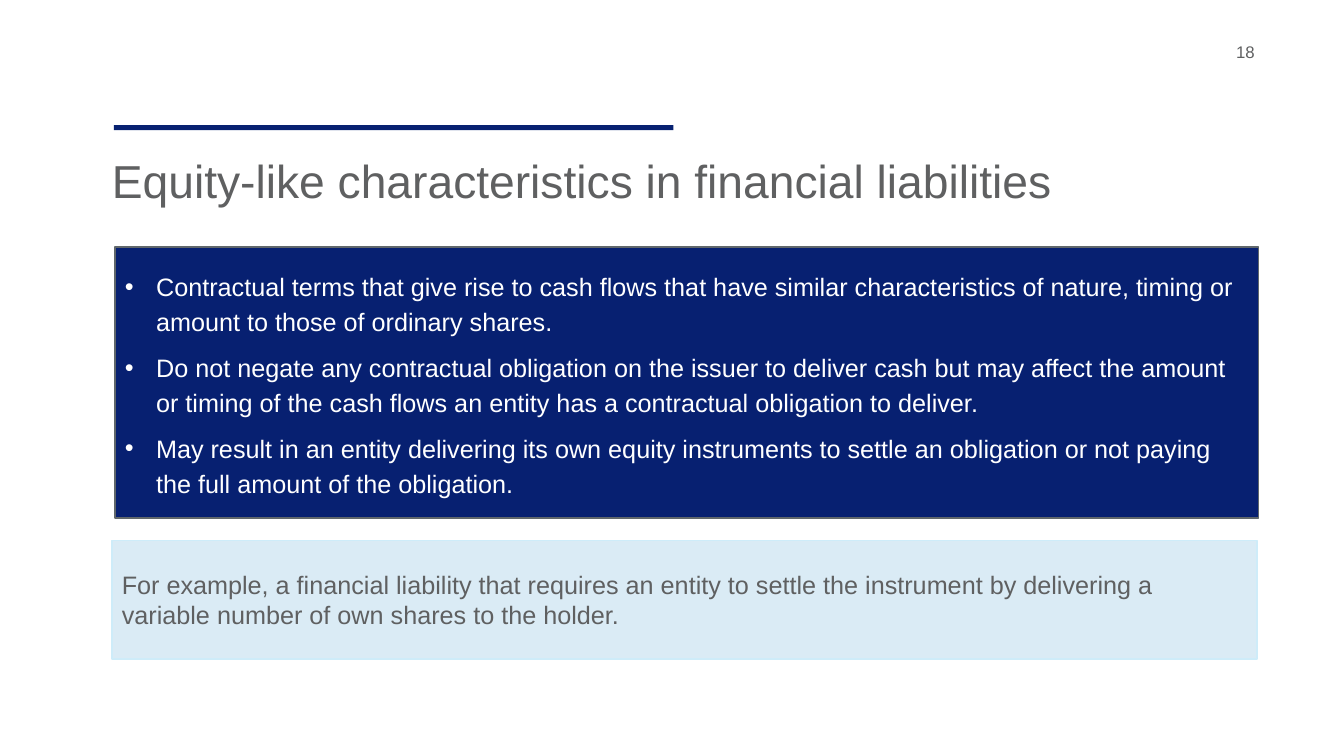
from dataclasses import dataclass

from lxml import etree
from pptx import Presentation
from pptx.dml.color import RGBColor
from pptx.enum.shapes import MSO_SHAPE
from pptx.enum.text import MSO_ANCHOR, MSO_AUTO_SIZE, PP_ALIGN
from pptx.oxml.ns import qn
from pptx.util import Inches, Pt

RECTANGLE = MSO_SHAPE.RECTANGLE
TOP, MIDDLE = MSO_ANCHOR.TOP, MSO_ANCHOR.MIDDLE
LEFT_ALIGNED = PP_ALIGN.LEFT
NO_AUTOFIT = MSO_AUTO_SIZE.NONE
TITLE_ONLY = 5


@dataclass(frozen=True)
class Theme:
    font: str = "Arial"
    navy: str = "072171"
    panel: str = "072071"
    panel_line: str = "60676B"
    pale: str = "DAEBF5"
    pale_line: str = "CEECF9"
    grey: str = "5F6061"
    white: str = "FFFFFF"
    title_size: int = 33
    body_size: int = 18
    number_size: int = 12


@dataclass(frozen=True)
class Box:
    left: float
    top: float
    width: float
    height: float

    def emu(self):
        return [Inches(value) for value in (self.left, self.top, self.width, self.height)]


THEME = Theme()
SLIDE_WIDTH, SLIDE_HEIGHT = 13.33, 7.5
MARGIN = 1.11
CONTENT_WIDTH = 11.36
BULLET_INDENT = 0.31
TITLE = "Equity-like characteristics in financial liabilities"
CHARACTERISTICS = [
    "Contractual terms that give rise to cash flows that have similar characteristics "
    "of nature, timing or amount to those of ordinary shares.",
    "Do not negate any contractual obligation on the issuer to deliver cash but may "
    "affect the amount or timing of the cash flows an entity has a contractual "
    "obligation to deliver.",
    "May result in an entity delivering its own equity instruments to settle an "
    "obligation or not paying the full amount of the obligation.",
]
EXAMPLE = (
    "For example, a financial liability that requires an entity to settle the "
    "instrument by delivering a variable number of own shares to the holder."
)


def add_bullet(paragraph):
    properties = paragraph._p.get_or_add_pPr()
    properties.set("marL", str(Inches(BULLET_INDENT)))
    properties.set("indent", str(-Inches(BULLET_INDENT)))
    etree.SubElement(properties, qn("a:buFont"), typeface=THEME.font)
    etree.SubElement(properties, qn("a:buChar"), char="•")


def write_text(shape, paragraphs, *, size, color, anchor=TOP, inset=(0, 0),
               bullets=False, line_spacing=None, space_after=0):
    frame = shape.text_frame
    frame.word_wrap = True
    frame.auto_size = NO_AUTOFIT
    frame.vertical_anchor = anchor
    frame.margin_left = frame.margin_right = Inches(inset[0])
    frame.margin_top = frame.margin_bottom = Inches(inset[1])
    for index, text in enumerate(paragraphs):
        paragraph = frame.add_paragraph() if index else frame.paragraphs[0]
        paragraph.text = text
        paragraph.alignment = LEFT_ALIGNED
        paragraph.line_spacing = line_spacing
        paragraph.space_after = Pt(space_after)
        if bullets:
            add_bullet(paragraph)
        paragraph.font.name = THEME.font
        paragraph.font.size = Pt(size)
        paragraph.font.color.rgb = RGBColor.from_string(color)


def add_rectangle(slide, box, fill, line=None):
    shape = slide.shapes.add_shape(RECTANGLE, *box.emu())
    shape.shadow.inherit = False
    shape.fill.solid()
    shape.fill.fore_color.rgb = RGBColor.from_string(fill)
    if line:
        shape.line.color.rgb = RGBColor.from_string(line)
        shape.line.width = Pt(1)
    else:
        shape.line.fill.background()
    return shape


def add_heading(slide, box):
    rule = Box(box.left + 0.02, box.top, box.width / 2 - 0.02, 0.05)
    add_rectangle(slide, rule, THEME.navy)
    title = slide.shapes.title
    title.left, title.top, title.width, title.height = Box(
        box.left, box.top + 0.27, box.width, box.height - 0.27).emu()
    write_text(title, [TITLE], size=THEME.title_size, color=THEME.grey)


def add_page_number(slide, box):
    number = slide.shapes.add_textbox(*box.emu())
    write_text(number, ["18"], size=THEME.number_size, color=THEME.grey)


def add_panel(slide, box, paragraphs, *, fill, line, color, **text_format):
    panel = add_rectangle(slide, box, fill, line)
    write_text(panel, paragraphs, size=THEME.body_size, color=color, anchor=MIDDLE,
               inset=(0.1, 0.05), space_after=8, **text_format)


def build_characteristics_slide(presentation):
    slide = presentation.slides.add_slide(presentation.slide_layouts[TITLE_ONLY])
    add_heading(slide, Box(MARGIN, 1.24, 11.14, 1.21))
    add_page_number(slide, Box(12.26, 0.41, 0.67, 0.29))
    add_panel(slide, Box(MARGIN + 0.03, 2.45, CONTENT_WIDTH - 0.02, 2.69),
              CHARACTERISTICS, fill=THEME.panel, line=THEME.panel_line,
              color=THEME.white, bullets=True, line_spacing=1.15)
    add_panel(slide, Box(MARGIN, 5.36, CONTENT_WIDTH, 1.18), [EXAMPLE],
              fill=THEME.pale, line=THEME.pale_line, color=THEME.grey)


def main():
    presentation = Presentation()
    presentation.slide_width = Inches(SLIDE_WIDTH)
    presentation.slide_height = Inches(SLIDE_HEIGHT)
    build_characteristics_slide(presentation)
    presentation.save("out.pptx")


if __name__ == "__main__":
    main()
